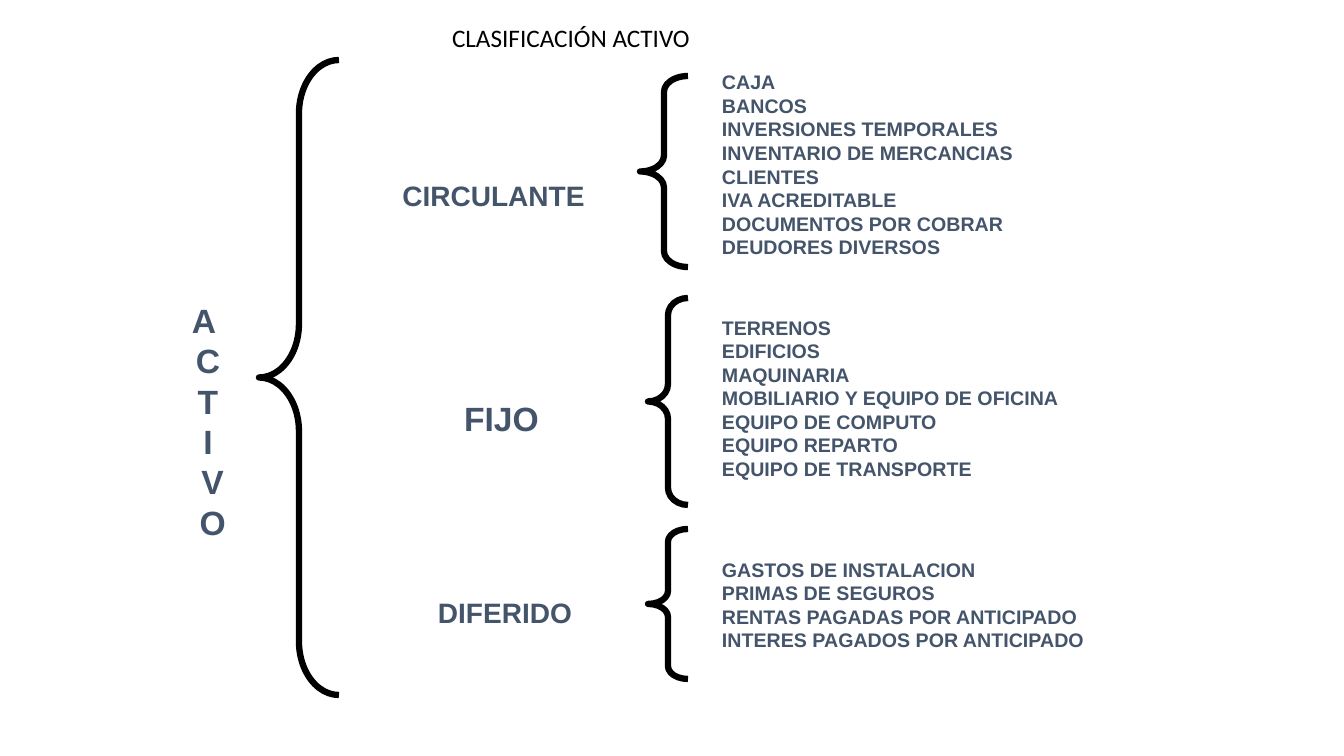
from pptx import Presentation
from pptx.dml.color import RGBColor
from pptx.enum.shapes import MSO_SHAPE
from pptx.enum.text import MSO_ANCHOR, MSO_AUTO_SIZE, PP_ALIGN
from pptx.util import Emu, Pt

THEME = {
    "black": RGBColor(0x00, 0x00, 0x00),
    "slate": RGBColor(0x44, 0x54, 0x6A),
    "heading_font": "Calibri",
    "body_font": "Arial",
    "title": 18,
    "list": 14,
    "label": 20,
    "large": 24,
    "brace": 4.5,
}


def px(value):
    return Emu(round(value * 914400 / 100.8))


def write(box, text, size, font=THEME["body_font"], color=THEME["slate"],
          bold=True, align=PP_ALIGN.LEFT, spacing=1.0, bottom=5):
    frame = box.text_frame
    frame.word_wrap = True
    frame.auto_size = MSO_AUTO_SIZE.NONE
    frame.vertical_anchor = MSO_ANCHOR.MIDDLE
    frame.margin_left = frame.margin_right = px(10)
    frame.margin_top = px(5)
    frame.margin_bottom = px(bottom)
    para = frame.paragraphs[0]
    para.alignment = align
    para.line_spacing = spacing
    for index, line in enumerate(text.split("\n")):
        if index:
            para.add_line_break()
        span = para.add_run()
        span.text = line
        span.font.name = font
        span.font.size = Pt(size)
        span.font.bold = bold
        span.font.color.rgb = color


deck = Presentation()
deck.slide_width, deck.slide_height = px(1344), px(756)
page = deck.slides.add_slide(deck.slide_layouts[5])

title = page.shapes.title
title.left, title.top, title.width, title.height = map(px, (442, 28, 359, 22))
write(title, "CLASIFICACIÓN ACTIVO", THEME["title"], font=THEME["heading_font"],
      color=THEME["black"], bold=False, spacing=0.9)

labels = [
    ("A \nC\nT\nI\n V\n O", THEME["large"], (168, 306, 80, 230)),
    ("CIRCULANTE", THEME["label"], (386, 163, 215, 64)),
    ("FIJO", THEME["large"], (450, 386, 103, 64)),
    ("DIFERIDO", THEME["label"], (418, 569, 174, 86)),
]
for text, size, place in labels:
    box = page.shapes.add_textbox(*map(px, place))
    write(box, text, size, align=PP_ALIGN.CENTER)

accounts = [
    ("CAJA\nBANCOS\nINVERSIONES TEMPORALES\nINVENTARIO DE MERCANCIAS\nCLIENTES\n"
     "IVA ACREDITABLE\nDOCUMENTOS POR COBRAR\nDEUDORES DIVERSOS", (77, 428, 199), 29),
    ("TERRENOS\nEDIFICIOS\nMAQUINARIA\nMOBILIARIO Y EQUIPO DE OFICINA\n"
     "EQUIPO DE COMPUTO\nEQUIPO REPARTO\nEQUIPO DE TRANSPORTE", (315, 412, 166), 5),
    ("GASTOS DE INSTALACION\nPRIMAS DE SEGUROS\nRENTAS PAGADAS POR ANTICIPADO\n"
     "INTERES PAGADOS POR ANTICIPADO", (529, 389, 151), 5),
]
for text, place, bottom in accounts:
    box = page.shapes.add_textbox(px(712), *map(px, place))
    write(box, text, THEME["list"], bottom=bottom)

braces = [
    ((259, 60, 80, 635), 0.67),
    ((640, 76, 48, 191), 0.33),
    ((648, 298, 40, 207), 0.43),
    ((648, 529, 40, 150), 0.32),
]
for place, curve in braces:
    brace = page.shapes.add_shape(MSO_SHAPE.LEFT_BRACE, *map(px, place))
    brace.adjustments[0] = curve
    brace.adjustments[1] = 0.5
    brace.fill.background()
    brace.line.color.rgb = THEME["black"]
    brace.line.width = Pt(THEME["brace"])
    brace.shadow.inherit = False

deck.save("out.pptx")
